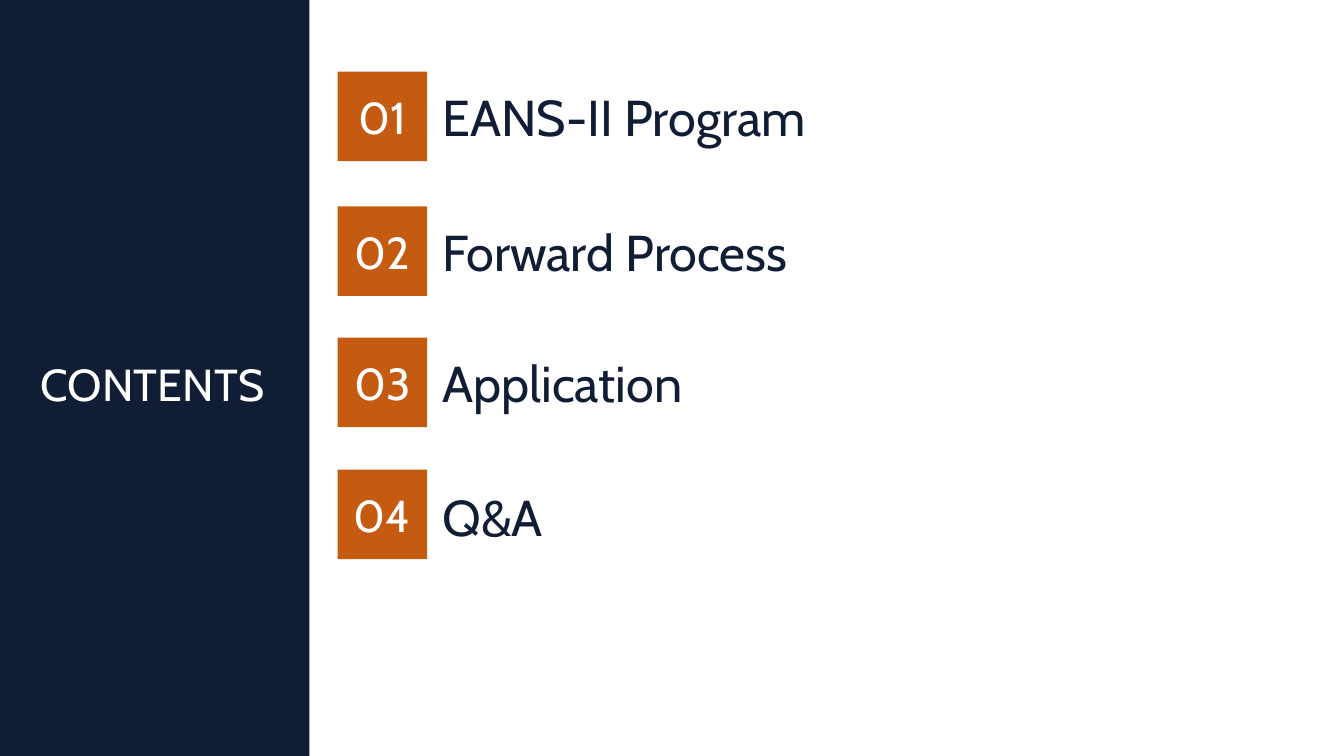
from dataclasses import dataclass

from pptx import Presentation
from pptx.dml.color import RGBColor
from pptx.enum.shapes import MSO_SHAPE
from pptx.enum.text import MSO_ANCHOR, PP_ALIGN
from pptx.shapes.autoshape import Shape
from pptx.slide import Slide
from pptx.util import Pt

COLORS = {"navy": "101D35", "orange": "C55A11", "white": "FFFFFF"}
FONT = "Cabin"
SLIDE_WIDTH, SLIDE_HEIGHT = 960, 540
SIDEBAR_WIDTH = 221
NUMBER_LEFT, NUMBER_SIZE = 241.2, 64
LABEL_LEFT, LABEL_WIDTH = 308.9, 628.6


@dataclass(frozen=True)
class Box:
    left: float
    top: float
    width: float
    height: float


@dataclass(frozen=True)
class Topic:
    label: str
    top: float
    label_shift: float = 0


TOPICS = [
    Topic("EANS-II Program", 51.2),
    Topic("Forward Process", 147.4),
    Topic("Application", 241.2),
    Topic("Q&A", 335.4, label_shift=1.5),
]


def add_rectangle(slide: Slide, box: Box, color: str) -> Shape:
    shape = slide.shapes.add_shape(
        MSO_SHAPE.RECTANGLE, Pt(box.left), Pt(box.top), Pt(box.width), Pt(box.height)
    )
    shape.shadow.inherit = False
    shape.fill.solid()
    shape.fill.fore_color.rgb = RGBColor.from_string(COLORS[color])
    shape.line.fill.background()
    return shape


def add_text_box(slide: Slide, box: Box) -> Shape:
    return slide.shapes.add_textbox(
        Pt(box.left), Pt(box.top), Pt(box.width), Pt(box.height)
    )


def write_text(shape: Shape, text: str, size: float, color: str, alignment: PP_ALIGN) -> None:
    frame = shape.text_frame
    frame.word_wrap = True
    frame.vertical_anchor = MSO_ANCHOR.MIDDLE
    paragraph = frame.paragraphs[0]
    paragraph.alignment = alignment
    run = paragraph.add_run()
    run.text = text
    run.font.name = FONT
    run.font.size = Pt(size)
    run.font.color.rgb = RGBColor.from_string(COLORS[color])


def add_sidebar(slide: Slide) -> None:
    add_rectangle(slide, Box(0, 0, SIDEBAR_WIDTH, SLIDE_HEIGHT), "navy")
    heading = add_text_box(slide, Box(0, 251.3, 218.2, 46))
    write_text(heading, "CONTENTS", 32, "white", PP_ALIGN.CENTER)


def add_topic(slide: Slide, number: int, topic: Topic) -> None:
    square = add_rectangle(
        slide, Box(NUMBER_LEFT, topic.top, NUMBER_SIZE, NUMBER_SIZE), "orange"
    )
    write_text(square, f"{number:02d}", 32, "white", PP_ALIGN.CENTER)
    label = add_text_box(
        slide, Box(LABEL_LEFT, topic.top + topic.label_shift, LABEL_WIDTH, NUMBER_SIZE)
    )
    write_text(label, topic.label, 36, "navy", PP_ALIGN.LEFT)


def main() -> None:
    presentation = Presentation()
    presentation.slide_width = Pt(SLIDE_WIDTH)
    presentation.slide_height = Pt(SLIDE_HEIGHT)
    slide = presentation.slides.add_slide(presentation.slide_layouts[6])
    add_sidebar(slide)
    for number, topic in enumerate(TOPICS, start=1):
        add_topic(slide, number, topic)
    presentation.save("out.pptx")


if __name__ == "__main__":
    main()
